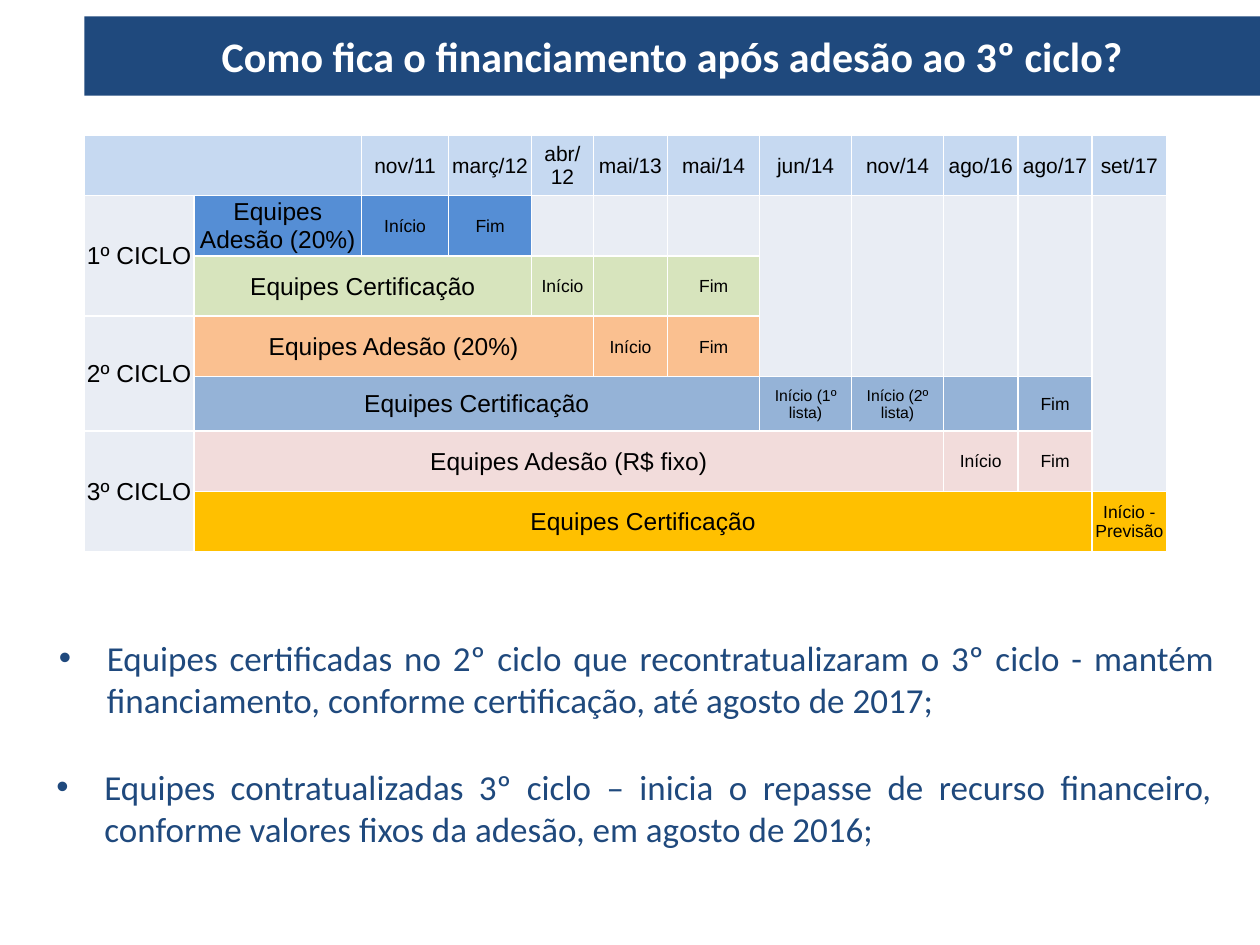
import pptx
import pptx.util
import pptx.dml.color
import pptx.enum.shapes
import pptx.enum.text
import pptx.oxml
import pptx.oxml.ns

Inches = pptx.util.Inches
Pt = pptx.util.Pt
RGBColor = pptx.dml.color.RGBColor
ALIGN = pptx.enum.text.PP_ALIGN
MIDDLE = pptx.enum.text.MSO_ANCHOR.MIDDLE

NAVY = RGBColor(0x1F, 0x49, 0x7D)
WHITE = RGBColor(0xFF, 0xFF, 0xFF)
BLACK = RGBColor(0, 0, 0)
HEADER = RGBColor(0xC6, 0xD9, 0xF1)
PALE = RGBColor(0xE9, 0xED, 0xF4)
BLUE = RGBColor(0x55, 0x8E, 0xD5)
GREEN = RGBColor(0xD7, 0xE4, 0xBD)
ORANGE = RGBColor(0xFA, 0xC0, 0x90)
STEEL = RGBColor(0x95, 0xB3, 0xD7)
PINK = RGBColor(0xF2, 0xDC, 0xDB)
GOLD = RGBColor(0xFF, 0xC0, 0x00)

COLUMN_WIDTHS = [0.87, 1.33, 0.69, 0.66, 0.49, 0.59, 0.73, 0.73, 0.73, 0.59, 0.59, 0.59]
ROW_HEIGHTS = [0.48, 0.48, 0.48, 0.48, 0.43, 0.48, 0.48]
MONTHS = ["nov/11", "març/12", "abr/12", "mai/13", "mai/14", "jun/14",
          "nov/14", "ago/16", "ago/17", "set/17"]
CYCLES = ["1º CICLO ", "2º CICLO ", "3º CICLO "]

# Stage label, columns it spans, colour, then (text, size) for the months that follow
START, END, GAP = ("Início", 10), ("Fim", 10), ("", 10)
STAGES = [
    ("Equipes Adesão (20%)", 1, BLUE, [START, END]),
    ("Equipes Certificação", 3, GREEN, [START, GAP, END]),
    ("Equipes Adesão (20%)", 4, ORANGE, [START, END]),
    ("Equipes Certificação", 6, STEEL,
     [("Início (1º lista)", 9), ("Início (2º lista)", 9), GAP, END]),
    ("Equipes Adesão (R$ fixo)", 8, PINK, [START, END]),
    ("Equipes Certificação", 10, GOLD, [("Início - Previsão", 10)]),
]

# Left, top and wording of each remark
REMARKS = [
    (0.37, 5, "Equipes certificadas no 2º ciclo que recontratualizaram o 3º ciclo - "
              "mantém financiamento, conforme certificação, até agosto de 2017;"),
    (0.35, 6.03, "Equipes contratualizadas 3º ciclo – inicia o repasse de recurso "
                 "financeiro, conforme valores fixos da adesão, em agosto de 2016;"),
]


def add_run(paragraph, text, size, font, color, bold=False):
    run = paragraph.add_run()
    run.text = text
    run.font.size = Pt(size)
    run.font.name = font
    run.font.color.rgb = color
    run.font.bold = bold


def add_title(slide):
    banner = slide.shapes.add_shape(pptx.enum.shapes.MSO_SHAPE.RECTANGLE,
                                    Inches(0.67), Inches(0.13), Inches(9.33), Inches(0.63))
    banner.shadow.inherit = False
    banner.fill.solid()
    banner.fill.fore_color.rgb = NAVY
    banner.line.fill.background()
    banner.text_frame.word_wrap = True
    banner.text_frame.vertical_anchor = MIDDLE
    paragraph = banner.text_frame.paragraphs[0]
    paragraph.alignment = ALIGN.CENTER
    add_run(paragraph, "Como fica o financiamento após adesão ao 3º ciclo?",
            24, "Calibri", WHITE, bold=True)


def fill_cell(cell, color):
    cell.fill.solid()
    cell.fill.fore_color.rgb = color


def style_cell(cell, color):
    cell.margin_left = cell.margin_right = cell.margin_top = Inches(0.01)
    cell.margin_bottom = 0
    cell.vertical_anchor = MIDDLE
    properties = cell._tc.get_or_add_tcPr()
    for side in "LRTB":
        properties.append(pptx.oxml.parse_xml(
            f'<a:ln{side} {pptx.oxml.ns.nsdecls("a")} w="{Pt(1)}"><a:solidFill>'
            f'<a:srgbClr val="{WHITE}"/></a:solidFill></a:ln{side}>'))
    fill_cell(cell, color)


def write_cell(cell, text, size):
    if text:
        paragraph = cell.text_frame.paragraphs[0]
        paragraph.alignment = ALIGN.CENTER
        add_run(paragraph, text, size, "Arial", BLACK)


def add_schedule(slide):
    table = slide.shapes.add_table(len(ROW_HEIGHTS), len(COLUMN_WIDTHS), Inches(0.67),
                                   Inches(1.07), Inches(8.58), Inches(3.33)).table
    for column, width in zip(table.columns, COLUMN_WIDTHS):
        column.width = Inches(width)
    for row, height in zip(table.rows, ROW_HEIGHTS):
        row.height = Inches(height)
    for r in range(len(ROW_HEIGHTS)):
        for c in range(len(COLUMN_WIDTHS)):
            style_cell(table.cell(r, c), PALE if r else HEADER)

    # Header months
    table.cell(0, 0).merge(table.cell(0, 1))
    for c, month in enumerate(MONTHS, start=2):
        write_cell(table.cell(0, c), month, 12)

    # Cycles, two rows each
    for i, cycle in enumerate(CYCLES):
        top = 1 + 2 * i
        table.cell(top, 0).merge(table.cell(top + 1, 0))
        write_cell(table.cell(top, 0), cycle, 14)

    # Stages and their milestones
    for r, (label, span, color, milestones) in enumerate(STAGES, start=1):
        for c in range(1, 1 + span + len(milestones)):
            fill_cell(table.cell(r, c), color)
        if span > 1:
            table.cell(r, 1).merge(table.cell(r, span))
        write_cell(table.cell(r, 1), label, 14)
        for c, (text, size) in enumerate(milestones, start=1 + span):
            write_cell(table.cell(r, c), text, size)

    # Empty months above the later stages
    for c, bottom in [(7, 3), (8, 3), (9, 3), (10, 3), (11, 5)]:
        table.cell(1, c).merge(table.cell(bottom, c))


def add_remark(slide, left, top, text):
    box = slide.shapes.add_textbox(Inches(left), Inches(top), Inches(9.37), Inches(0.77))
    box.text_frame.word_wrap = True
    box.text_frame.auto_size = pptx.enum.text.MSO_AUTO_SIZE.SHAPE_TO_FIT_TEXT
    paragraph = box.text_frame.paragraphs[0]
    paragraph.alignment = ALIGN.JUSTIFY
    properties = paragraph._p.get_or_add_pPr()
    properties.set("marL", str(Inches(0.38)))
    properties.set("indent", str(-Inches(0.38)))
    for bullet in ('<a:buFont {} typeface="Arial"/>', '<a:buChar {} char="•"/>'):
        properties.append(pptx.oxml.parse_xml(bullet.format(pptx.oxml.ns.nsdecls("a"))))
    add_run(paragraph, text, 20, "Calibri", NAVY)


def main():
    deck = pptx.Presentation()
    deck.slide_width, deck.slide_height = Inches(10), Inches(7.5)
    slide = deck.slides.add_slide(deck.slide_layouts[6])
    add_title(slide)
    add_schedule(slide)
    for left, top, text in REMARKS:
        add_remark(slide, left, top, text)
    deck.save("out.pptx")


if __name__ == "__main__":
    main()
